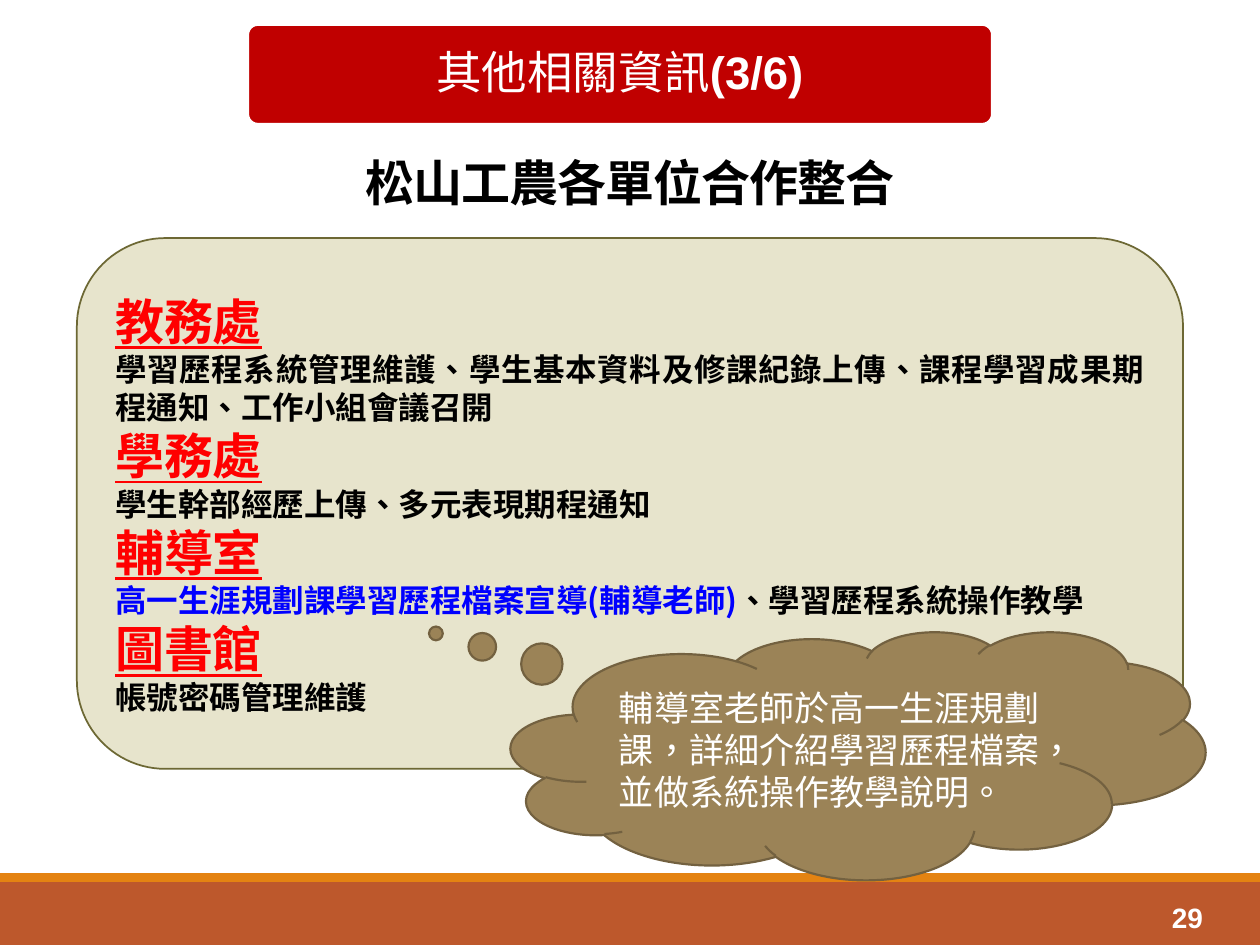
from lxml import etree
from pptx import Presentation
from pptx.dml.color import RGBColor
from pptx.enum.shapes import MSO_SHAPE
from pptx.enum.text import MSO_ANCHOR, MSO_AUTO_SIZE, PP_ALIGN
from pptx.oxml.ns import qn
from pptx.util import Cm, Pt

RECT, ROUND = MSO_SHAPE.RECTANGLE, MSO_SHAPE.ROUNDED_RECTANGLE
CLOUD = MSO_SHAPE.CLOUD_CALLOUT
MIDDLE, BOTTOM = MSO_ANCHOR.MIDDLE, MSO_ANCHOR.BOTTOM
LEFT, CENTER, RIGHT = PP_ALIGN.LEFT, PP_ALIGN.CENTER, PP_ALIGN.RIGHT
JUSTIFY = PP_ALIGN.JUSTIFY
HAN, LATIN = "Noto Sans CJK SC", "Arial"
WHITE, BLACK, RED, BLUE = "FFFFFF", "000000", "FF0000", "0000FF"
RUST = "BD582C"


def paint(fill, color):
    fill.solid()
    fill.fore_color.rgb = RGBColor.from_string(color)


def write(para, text, size, color=WHITE, face=HAN, bold=False, under=False, align=LEFT):
    para.alignment = align
    run = para.add_run()
    run.text = text
    font = run.font
    font.size, font.bold, font.underline = Pt(size), bold, under
    paint(font.fill, color)
    font.name = face
    props = run._r.get_or_add_rPr()
    props.set("lang", "zh-TW")
    etree.SubElement(props, qn("a:ea")).set("typeface", face)
    return props


deck = Presentation()
deck.slide_width, deck.slide_height = Cm(25.4), Cm(19.05)
slide = deck.slides.add_slide(deck.slide_layouts[5])

title = slide.shapes.title
title.left, title.top, title.width, title.height = Cm(0), Cm(2.9), Cm(25.4), Cm(1.5)
frame = title.text_frame
frame.auto_size = MSO_AUTO_SIZE.NONE
frame.vertical_anchor = BOTTOM
para = frame.paragraphs[0]
para.line_spacing = 0.85
props = write(para, "松山工農各單位合作整合", 28, color=BLACK, bold=True, align=CENTER)
props.set("spc", "-50")

shapes = []
for kind, left, top, width, height, fill, line, weight in [
    (RECT, 0, 17.78, 25.4, 1.27, RUST, None, 0),
    (RECT, 0, 17.6, 25.4, 0.18, "E48312", None, 0),
    (ROUND, 1.55, 4.8, 22.3, 10.7, "E7E4CC", "6D6834", 1),
    (ROUND, 5, 0.5, 15, 2, "C00000", WHITE, 1.25),
    (CLOUD, 10.3, 12.73, 14, 5, "9B8357", "736140", 1.25),
]:
    shape = slide.shapes.add_shape(kind, Cm(left), Cm(top), Cm(width), Cm(height))
    shape.shadow.inherit = False
    paint(shape.fill, fill)
    if line:
        paint(shape.line.fill, line)
        shape.line.width = Pt(weight)
    else:
        shape.line.fill.background()
    shape.text_frame.vertical_anchor = MIDDLE
    shapes.append(shape)
band, stripe, panel, banner, cloud = shapes

box = slide.shapes.add_textbox(Cm(22), Cm(18), Cm(2.5), Cm(1))
paint(box.fill, RUST)
box.text_frame.word_wrap = True
box.text_frame.vertical_anchor = MIDDLE
write(box.text_frame.paragraphs[0], "29", 16, face=LATIN, bold=True, align=RIGHT)

banner.adjustments[0] = 0.1
para = banner.text_frame.paragraphs[0]
para.line_spacing = 0.9
write(para, "其他相關資訊", 26, align=CENTER)
write(para, "(3/6)", 26, face=LATIN, bold=True, align=CENTER)

units = [
    ("教務處", [("學習歷程系統管理維護、學生基本資料及修課紀錄上傳、課程學習成果期程通知、工作小組會議召開", BLACK)]),
    ("學務處", [("學生幹部經歷上傳、多元表現期程通知", BLACK)]),
    ("輔導室", [("高一生涯規劃課學習歷程檔案宣導(輔導老師)", BLUE), ("、學習歷程系統操作教學", BLACK)]),
    ("圖書館", [("帳號密碼管理維護", BLACK)]),
]
frame = panel.text_frame
frame.margin_top = frame.margin_bottom = Cm(0.5)
for row, (unit, parts) in enumerate(units):
    head = frame.add_paragraph() if row else frame.paragraphs[0]
    write(head, unit, 28, color=RED, bold=True, under=True, align=JUSTIFY)
    duty = frame.add_paragraph()
    for text, color in parts:
        write(duty, text, 18, color=color, bold=True, align=JUSTIFY)

cloud.adjustments[0], cloud.adjustments[1] = -60.8 / 100, -49.2 / 100
write(cloud.text_frame.paragraphs[0], "輔導室老師於高一生涯規劃課，詳細介紹學習歷程檔案，並做系統操作教學說明。", 20)

deck.save("out.pptx")
